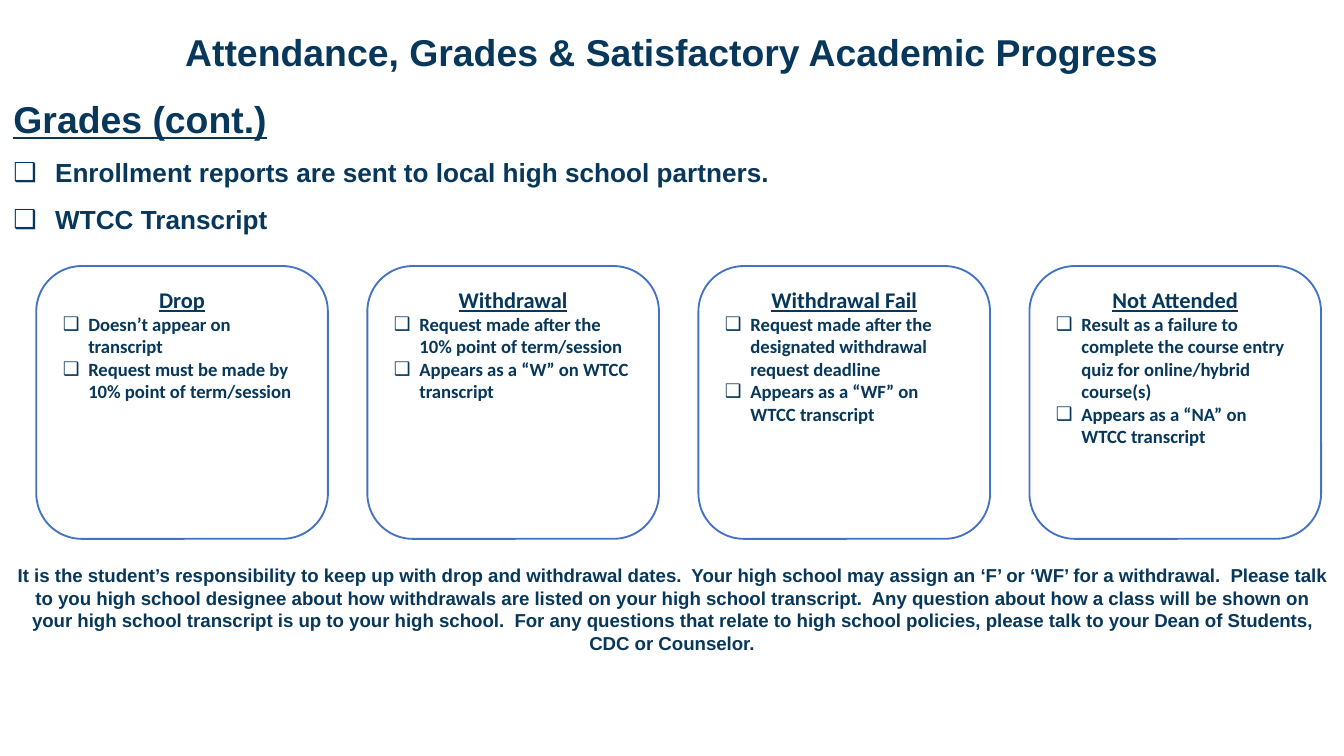
from dataclasses import dataclass

from lxml import etree
from pptx import Presentation
from pptx.dml.color import RGBColor
from pptx.enum import shapes, text
from pptx.oxml import ns
from pptx.util import Inches, Pt


@dataclass(frozen=True)
class Theme:
    ink: RGBColor = RGBColor(0x07, 0x37, 0x5A)
    outline: RGBColor = RGBColor(0x44, 0x72, 0xC4)
    paper: RGBColor = RGBColor(0xFF, 0xFF, 0xFF)
    main_font: str = "Arial"
    card_font: str = "Calibri"
    title_size: int = 20
    list_size: int = 14
    card_title_size: int = 12
    small_size: int = 10


@dataclass(frozen=True)
class Box:
    left: float
    top: float
    width: float
    height: float

    def lengths(self):
        return [Inches(v) for v in (self.left, self.top, self.width, self.height)]


THEME = Theme()
BULLET = "❑"

CARDS = [
    ("Drop", [
        "Doesn’t appear on transcript",
        "Request must be made by 10% point of term/session",
    ]),
    ("Withdrawal", [
        "Request made after the 10% point of term/session",
        "Appears as a “W” on WTCC transcript",
    ]),
    ("Withdrawal Fail", [
        "Request made after the designated withdrawal request deadline",
        "Appears as a “WF” on WTCC transcript",
    ]),
    ("Not Attended", [
        "Result as a failure to complete the course entry quiz for online/hybrid course(s)",
        "Appears as a “NA” on WTCC transcript",
    ]),
]

RESPONSIBILITY = (
    "It is the student’s responsibility to keep up with drop and withdrawal dates.  "
    "Your high school may assign an ‘F’ or ‘WF’ for a withdrawal.  "
    "Please talk to you high school designee about how withdrawals are listed on your "
    "high school transcript.  Any question about how a class will be shown on your high "
    "school transcript is up to your high school.  For any questions that relate to high "
    "school policies, please talk to your Dean of Students, CDC or Counselor."
)


def set_bullet(paragraph, indent):
    properties = paragraph._p.get_or_add_pPr()
    properties.set("marL", str(Inches(indent)))
    properties.set("indent", str(-Inches(indent)))
    if indent:
        font = etree.SubElement(properties, ns.qn("a:buFont"))
        font.set("typeface", THEME.main_font)
        etree.SubElement(properties, ns.qn("a:buChar")).set("char", BULLET)
    else:
        etree.SubElement(properties, ns.qn("a:buNone"))


def write(frame, content, size, font=THEME.main_font, centered=False,
          underline=False, indent=0, spacing=1.0):
    paragraph = frame.paragraphs[0]
    if paragraph.runs:
        paragraph = frame.add_paragraph()
    set_bullet(paragraph, indent)
    paragraph.alignment = text.PP_ALIGN.CENTER if centered else text.PP_ALIGN.LEFT
    paragraph.line_spacing = spacing
    paragraph.space_before = Pt(0)
    run = paragraph.add_run()
    run.text = content
    run.font.name = font
    run.font.size = Pt(size)
    run.font.bold = True
    run.font.underline = underline
    run.font.color.rgb = THEME.ink


def prepare_frame(shape):
    frame = shape.text_frame
    frame.word_wrap = True
    frame.auto_size = text.MSO_AUTO_SIZE.NONE
    frame.vertical_anchor = text.MSO_ANCHOR.TOP
    return frame


def place(shape, box):
    shape.left, shape.top, shape.width, shape.height = box.lengths()
    return prepare_frame(shape)


def add_title(slide, box):
    frame = place(slide.shapes.title, box)
    write(frame, "Attendance, Grades & Satisfactory Academic Progress",
          THEME.title_size, centered=True, spacing=1.5)


def add_grades_list(slide, box):
    frame = place(slide.placeholders[1], box)
    write(frame, "Grades (cont.)", THEME.title_size, underline=True, spacing=1.5)
    for item in ("Enrollment reports are sent to local high school partners.",
                 "WTCC Transcript"):
        write(frame, item, THEME.list_size, indent=0.31, spacing=1.5)


def add_card(slide, box, heading, items):
    card = slide.shapes.add_shape(
        shapes.MSO_SHAPE.ROUNDED_RECTANGLE, *box.lengths())
    card.shadow.inherit = False
    card.fill.solid()
    card.fill.fore_color.rgb = THEME.paper
    card.line.color.rgb = THEME.outline
    card.line.width = Pt(1)
    frame = prepare_frame(card)
    write(frame, heading, THEME.card_title_size, font=THEME.card_font,
          centered=True, underline=True)
    for item in items:
        write(frame, item, THEME.small_size, font=THEME.card_font, indent=0.19)


def add_card_row(slide, box, card_width=2.17):
    pitch = (box.width - card_width) / (len(CARDS) - 1)
    for index, (heading, items) in enumerate(CARDS):
        card_box = Box(box.left + index * pitch, box.top, card_width, box.height)
        add_card(slide, card_box, heading, items)


def add_responsibility_note(slide, box):
    frame = prepare_frame(slide.shapes.add_textbox(*box.lengths()))
    write(frame, RESPONSIBILITY, THEME.small_size, centered=True)


def main():
    presentation = Presentation()
    presentation.slide_width = Inches(10)
    presentation.slide_height = presentation.slide_width * 9 // 16
    slide = presentation.slides.add_slide(presentation.slide_layouts[1])
    add_title(slide, Box(0, 0, 10, 0.54))
    add_grades_list(slide, Box(0, 0.5, 6.5, 1.27))
    add_responsibility_note(slide, Box(0, 4.15, 10, 0.77))
    add_card_row(slide, Box(0.27, 1.98, 9.56, 2.03))
    presentation.save("out.pptx")


if __name__ == "__main__":
    main()
